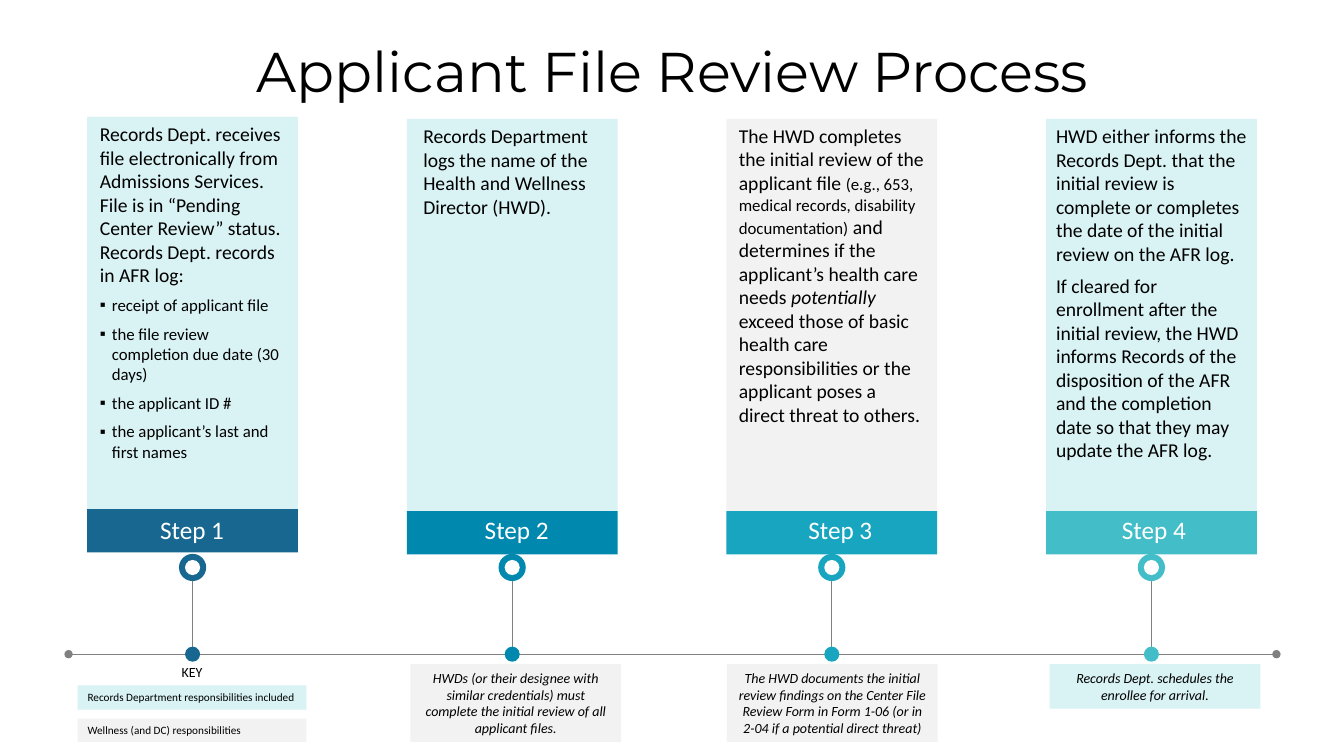
from dataclasses import dataclass
from typing import Any, Optional

from lxml import etree
from pptx import Presentation
from pptx.dml.color import RGBColor
from pptx.enum import shapes, text
from pptx.oxml import ns
from pptx.util import Inches, Pt

COLORS = {
    "black": "000000", "white": "FFFFFF", "gray": "808080",
    "records": "D9F2F4", "wellness": "F2F2F2",
    "step1": "186791", "step2": "0188AF", "step3": "17A5C0", "step4": "43BDC8",
}
FIRST_CENTER, PITCH = 1.91, 3.17
PANEL_W, PANEL_H, BAND_H = 2.09, 3.89, 0.43
TIMELINE_Y = 6.49
RECT, OVAL = shapes.MSO_SHAPE.RECTANGLE, shapes.MSO_SHAPE.OVAL
LEFT, CENTER = text.PP_ALIGN.LEFT, text.PP_ALIGN.CENTER


@dataclass
class Run:
    text: str
    size: Optional[float] = None
    italic: bool = False


@dataclass
class Para:
    runs: list[Run]
    bullet: str = ""
    before: float = 0
    after: float = 0


@dataclass
class Step:
    label: str
    color: str
    owner: str
    top: float
    label_left: float


@dataclass
class Box:
    text: str
    fill: str
    left: float
    top: float
    width: float
    height: float


STEPS = [
    Step("Step 1", "step1", "records", 1.16, 1),
    Step("Step 2", "step2", "records", 1.18, 4.22),
    Step("Step 3", "step3", "wellness", 1.18, 7.43),
    Step("Step 4", "step4", "records", 1.18, 10.54),
]
NOTES = [
    Box("HWDs (or their designee with similar credentials) must complete the initial "
        "review of all applicant files.", "wellness", 4.07, 6.59, PANEL_W, 0.77),
    Box("The HWD documents the initial review findings on the Center File Review Form "
        "in Form 1-06 (or in 2-04 if a potential direct threat)",
        "wellness", 7.21, 6.59, PANEL_W, 0.77),
    Box("Records Dept. schedules the enrollee for arrival.",
        "records", 10.41, 6.59, PANEL_W, 0.44),
]
KEY = [
    Box("Records Department responsibilities included", "records", 0.77, 6.8, 2.27, 0.24),
    Box("Wellness (and DC) responsibilities", "wellness", 0.77, 7.13, 2.27, 0.23),
]
INTAKE = [
    Para([Run("Records Dept. receives file electronically from Admissions Services. "
              "File is in “Pending Center Review” status.")]),
    Para([Run("Records Dept. records in AFR log:")], after=6),
] + [Para([Run(item, 12)], bullet="▪", after=6) for item in (
    "receipt of applicant file",
    "the file review completion due date (30 days)",
    "the applicant ID #",
    "the applicant’s last and first names",
)]
LOGGING = [Para([Run("Records Department logs the name of the Health and Wellness "
                     "Director (HWD).")])]
REVIEW = [Para([
    Run("The HWD completes the initial review of the applicant file "),
    Run("(e.g., 653, medical records, disability documentation)", 12),
    Run(" and determines if the applicant’s health care needs "),
    Run("potentially", italic=True),
    Run(" exceed those of basic health care responsibilities or the applicant poses "
        "a direct threat to others."),
])]
OUTCOME = [Para([Run(passage)], before=6) for passage in (
    "HWD either informs the Records Dept. that the initial review is complete or "
    "completes the date of the initial review on the AFR log.",
    "If cleared for enrollment after the initial review, the HWD informs Records of "
    "the disposition of the AFR and the completion date so that they may update the "
    "AFR log.",
)]


def rgb(name: str) -> RGBColor:
    return RGBColor.from_string(COLORS[name])


def write(sp: Any, content: str | list[Para], size: float = 14, font: str = "Calibri",
          color: str = "black", align: Any = LEFT, italic: bool = False) -> None:
    paras = [Para([Run(content)])] if isinstance(content, str) else content
    tf = sp.text_frame
    tf.word_wrap = True
    tf.auto_size = text.MSO_AUTO_SIZE.NONE
    tf.vertical_anchor = text.MSO_ANCHOR.TOP
    for i, para in enumerate(paras):
        p = tf.add_paragraph() if i else tf.paragraphs[0]
        p.alignment = align
        p.space_before, p.space_after = Pt(para.before), Pt(para.after)
        pPr = p._p.get_or_add_pPr()
        indent = Inches(0.12) if para.bullet else 0
        pPr.set("marL", str(indent))
        pPr.set("indent", str(-indent))
        if para.bullet:
            etree.SubElement(pPr, ns.qn("a:buChar")).set("char", para.bullet)
        else:
            etree.SubElement(pPr, ns.qn("a:buNone"))
        for run in para.runs:
            r = p.add_run()
            r.text = run.text
            r.font.name, r.font.size = font, Pt(run.size or size)
            r.font.italic = italic or run.italic
            r.font.color.rgb = rgb(color)


def place(sp: Any, left: float, top: float, width: float, height: float) -> None:
    sp.left, sp.top, sp.width, sp.height = map(Inches, (left, top, width, height))


def add_shape(parent: Any, kind: Any, fill: str, left: float, top: float,
              width: float, height: float) -> Any:
    sp = parent.add_shape(kind, *map(Inches, (left, top, width, height)))
    sp.shadow.inherit = False
    sp.fill.solid()
    sp.fill.fore_color.rgb = rgb(fill)
    sp.line.fill.background()
    return sp


def add_dot(parent: Any, fill: str, x: float, y: float, size: float) -> None:
    add_shape(parent, OVAL, fill, x - size / 2, y - size / 2, size, size)


def add_text(parent: Any, content: str | list[Para], left: float, top: float,
             width: float, height: float, **fmt: Any) -> None:
    write(parent.add_textbox(*map(Inches, (left, top, width, height))), content, **fmt)


def add_line(parent: Any, x1: float, y1: float, x2: float, y2: float,
             oval_ends: bool = False) -> None:
    line = parent.add_connector(shapes.MSO_CONNECTOR.STRAIGHT,
                                *map(Inches, (x1, y1, x2, y2)))
    line.line.color.rgb = rgb("gray")
    line.line.width = Pt(0.5)
    if oval_ends:
        for end in ("a:headEnd", "a:tailEnd"):
            etree.SubElement(line.line._get_or_add_ln(), ns.qn(end)).set("type", "oval")
    etree.SubElement(line._element.spPr, ns.qn("a:effectLst"))


def add_step(parent: Any, step: Step, center: float) -> Any:
    left, band_top = center - PANEL_W / 2, step.top + PANEL_H
    add_line(parent, center, 5.71, center, 6.47)
    panel = add_shape(parent, RECT, step.owner, left, step.top, PANEL_W, PANEL_H)
    add_shape(parent, RECT, step.color, left, band_top, PANEL_W, BAND_H)
    ring = parent.add_group_shape().shapes
    add_dot(ring, step.color, center, 5.63, 0.27)
    add_dot(ring, "white", center, 5.63, 0.15)
    add_dot(parent, step.color, center, TIMELINE_Y, 0.15)
    add_text(parent, step.label, step.label_left, 5.05, 1.81, 0.4,
             size=18, color="white", align=CENTER)
    return panel


def main() -> None:
    prs = Presentation()
    prs.slide_width, prs.slide_height = Inches(13.33), Inches(7.5)
    slide = prs.slides.add_slide(prs.slide_layouts[1])
    tree = slide.shapes
    title, intake = tree.title, slide.placeholders[1]
    place(title, 1.33, 0.31, 10.68, 0.77)
    write(title, "Applicant File Review Process", size=40, font="Montserrat", align=CENTER)

    add_line(tree, 0.68, TIMELINE_Y, 12.66, TIMELINE_Y, oval_ends=True)
    panels = [add_step(tree, step, FIRST_CENTER + PITCH * i)
              for i, step in enumerate(STEPS)]

    place(intake, 0.89, 1.16, 2.04, 3.5)
    intake.fill.solid()
    intake.fill.fore_color.rgb = rgb("records")
    write(intake, INTAKE)
    panels[0]._element.addnext(intake._element)
    add_text(tree, LOGGING, 4.1, 1.18, 2.04, 1.28)
    add_text(tree, REVIEW, 7.23, 1.18, 2.04, 3.37)
    write(panels[3], OUTCOME)

    for note in NOTES:
        sp = add_shape(tree, RECT, note.fill, note.left, note.top, note.width, note.height)
        write(sp, note.text, size=10, align=CENTER, italic=True)
    key = tree.add_group_shape().shapes
    for entry in KEY:
        sp = add_shape(key, RECT, entry.fill, entry.left, entry.top, entry.width, entry.height)
        write(sp, entry.text, size=8)
    add_text(key, "KEY", 0.6, 6.53, 2.61, 0.27, size=10, align=CENTER)
    prs.save("out.pptx")


if __name__ == "__main__":
    main()
